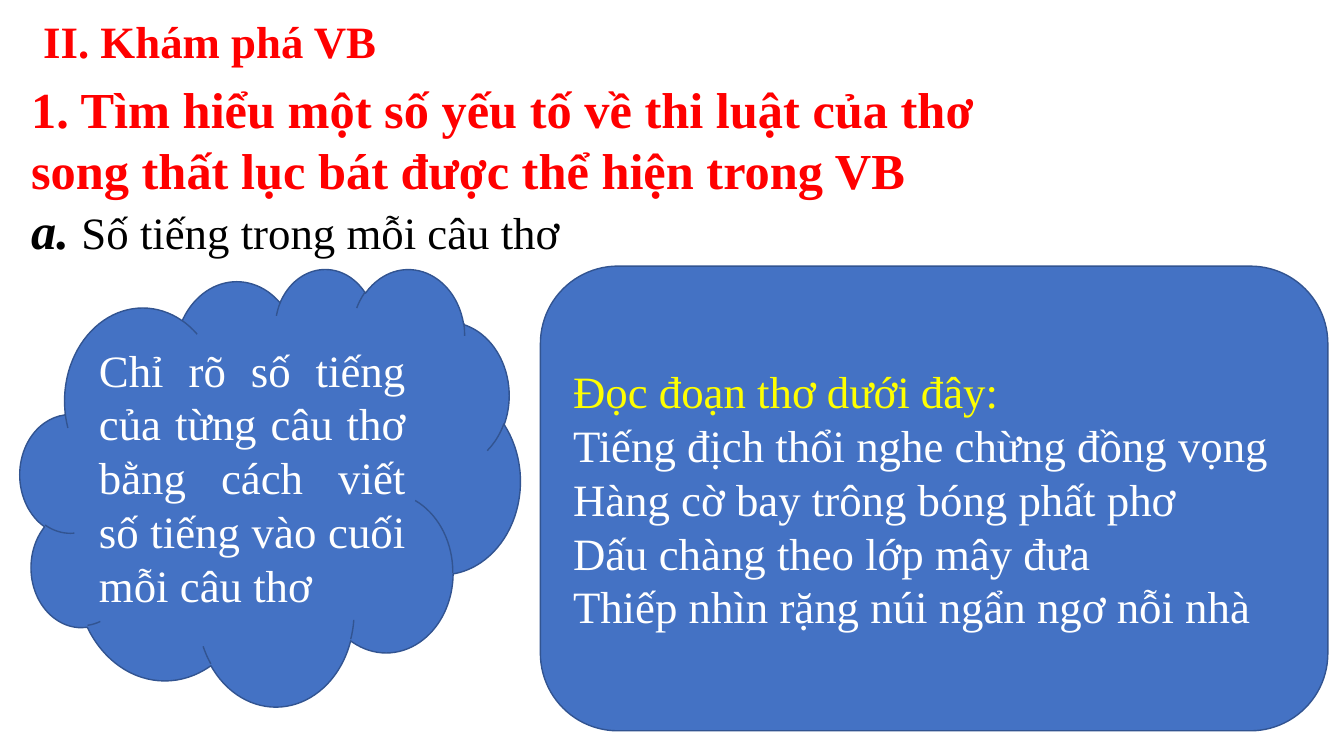
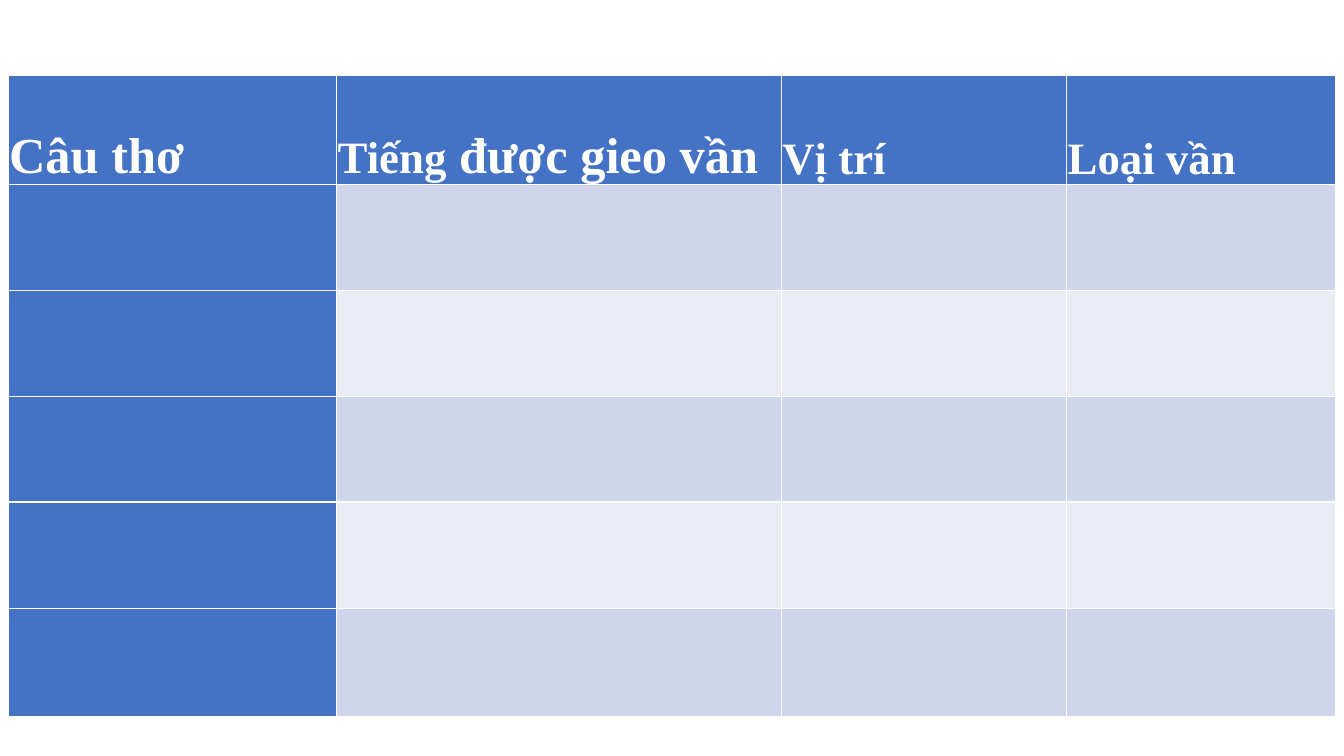
from lxml.etree import SubElement
from pptx import Presentation
from pptx.dml.color import RGBColor
from pptx.enum.shapes import MSO_SHAPE
from pptx.enum.text import MSO_ANCHOR, PP_ALIGN
from pptx.oxml.ns import qn
from pptx.util import Inches, Pt

FONT = "Times New Roman"
BLUE, OUTLINE = "4472C4", "325491"
RED, YELLOW, WHITE, BLACK = "FF0000", "FFFF00", "FFFFFF", "000000"
BANDS = ("CFD5EA", "E9EBF5")
LARGE, NORMAL = 36, 32


def color(value):
    return RGBColor.from_string(value)


def add_span(para, text, size=NORMAL, tint=WHITE, bold=False, italic=False):
    span = para.add_run()
    span.text = text
    font = span.font
    font.name, font.size = FONT, Pt(size)
    font.bold, font.italic = bold, italic
    font.color.rgb = color(tint)


def add_paras(frame, paras, align=PP_ALIGN.LEFT):
    """Write paragraphs, each a list of (text, style) spans."""
    frame.word_wrap = True
    for index, spans in enumerate(paras):
        para = frame.add_paragraph() if index else frame.paragraphs[0]
        para.alignment = align
        for text, style in spans:
            add_span(para, text, **style)


def add_text(page, place, paras):
    box = page.shapes.add_textbox(*map(Inches, place))
    add_paras(box.text_frame, paras)


def add_panel(page, kind, place, paras, align=PP_ALIGN.LEFT):
    panel = page.shapes.add_shape(kind, *map(Inches, place))
    panel.shadow.inherit = False
    panel.fill.solid()
    panel.fill.fore_color.rgb = color(BLUE)
    panel.line.color.rgb = color(OUTLINE)
    panel.line.width = Pt(1)
    panel.text_frame.vertical_anchor = MSO_ANCHOR.MIDDLE
    add_paras(panel.text_frame, paras, align)


def style_cell(cell, fill):
    """Draw white borders, then the fill, as the cell schema orders them."""
    properties = cell._tc.get_or_add_tcPr()
    for side in ("lnL", "lnR", "lnT", "lnB"):
        line = SubElement(properties, qn(f"a:{side}"), w=str(Pt(1)))
        solid = SubElement(line, qn("a:solidFill"))
        SubElement(solid, qn("a:srgbClr"), val=WHITE)
    cell.fill.solid()
    cell.fill.fore_color.rgb = color(fill)


def add_header(cell, spans):
    cell.vertical_anchor = MSO_ANCHOR.BOTTOM
    cell.margin_left = cell.margin_right = Inches(0.01)
    cell.margin_top = cell.margin_bottom = 0
    para = cell.text_frame.paragraphs[0]
    para.line_spacing = 1.2
    for text, size in spans:
        add_span(para, text, size, bold=True)


def add_rhyme_table(page, place, widths, heights, headers):
    table = page.shapes.add_table(
        len(heights), len(widths), *map(Inches, place)).table
    for column, width in zip(table.columns, widths):
        column.width = Inches(width)
    for row, height in zip(table.rows, heights):
        row.height = Inches(height)
    for r in range(len(heights)):
        for c in range(len(widths)):
            is_heading = r == 0 or c == 0
            style_cell(table.cell(r, c), BLUE if is_heading else BANDS[(r - 1) % 2])
    for c, spans in enumerate(headers):
        add_header(table.cell(0, c), spans)


def build_verse_page(page):
    heading = {"tint": RED, "bold": True}
    add_text(page, (0.21, 0.73, 10.29, 1.92), [
        [("1. Tìm hiểu một số yếu tố về thi luật của thơ song thất lục bát "
          "được thể hiện trong VB", {"size": LARGE, **heading})],
        [("a. ", {"size": LARGE, "tint": BLACK, "bold": True, "italic": True}),
         ("Số tiếng trong mỗi câu thơ", {"tint": BLACK})],
    ])
    add_text(page, (0.33, 0.09, 7.92, 0.64), [[("II. Khám phá VB", heading)]])
    verses = (
        "Tiếng địch thổi nghe chừng đồng vọng",
        "Hàng cờ bay trông bóng phất phơ",
        "Dấu chàng theo lớp mây đưa",
        "Thiếp nhìn rặng núi ngẩn ngơ nỗi nhà",
    )
    add_panel(page, MSO_SHAPE.ROUNDED_RECTANGLE, (5.36, 2.64, 7.81, 4.61),
              [[("Đọc đoạn thơ dưới đây:", {"tint": YELLOW})]]
              + [[(verse, {})] for verse in verses])
    add_panel(page, MSO_SHAPE.CLOUD, (0.2, 2.66, 4.96, 4.34),
              [[("Chỉ rõ số tiếng của từng câu thơ bằng cách viết số tiếng "
                 "vào cuối mỗi câu thơ", {})]], PP_ALIGN.JUSTIFY)


def build_rhyme_page(page):
    add_rhyme_table(
        page, (0.08, 0.75, 13.17, 6.36),
        widths=(3.26, 4.41, 2.83, 2.67),
        heights=(1.08, 1.05, 1.05, 1.05, 1.06, 1.07),
        headers=(
            [("Câu thơ", LARGE)],
            [("Tiếng", NORMAL), (" được gieo vần", LARGE)],
            [("Vị trí", NORMAL)],
            [("Loại vần", NORMAL)],
        ))


def main():
    deck = Presentation()
    deck.slide_width, deck.slide_height = Inches(13.33), Inches(7.5)
    blank = deck.slide_layouts[6]
    for build in (build_verse_page, build_rhyme_page):
        build(deck.slides.add_slide(blank))
    deck.save("out.pptx")


if __name__ == "__main__":
    main()
